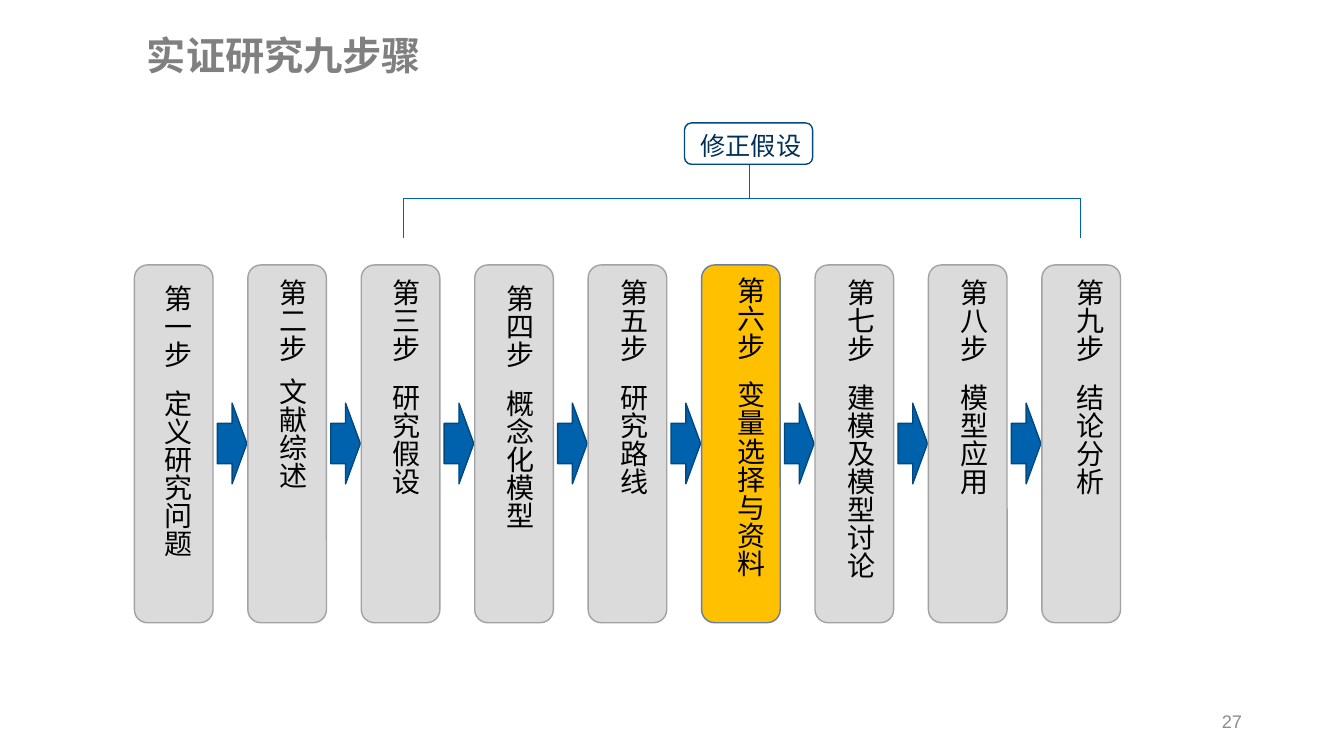
import pptx
import pptx.dml.color
import pptx.enum.shapes
import pptx.enum.text
import pptx.oxml.ns
import pptx.util
from lxml import etree

RGBColor = pptx.dml.color.RGBColor
Shape = pptx.enum.shapes.MSO_SHAPE
Align = pptx.enum.text.PP_ALIGN
Anchor = pptx.enum.text.MSO_ANCHOR
AutoSize = pptx.enum.text.MSO_AUTO_SIZE
qn = pptx.oxml.ns.qn

BLUE = RGBColor(0x00, 0x61, 0xAD)
DARK_BLUE = RGBColor(0x00, 0x48, 0x80)
NAVY = RGBColor(0x00, 0x30, 0x56)
SLATE = RGBColor(0x6A, 0x7E, 0xA3)
AMBER = RGBColor(0xFF, 0xC0, 0x00)
LIGHT_GRAY = RGBColor(0xDB, 0xDB, 0xDB)
EDGE_GRAY = RGBColor(0xA2, 0xA2, 0xA2)
TITLE_GRAY = RGBColor(0x80, 0x80, 0x80)
NUMBER_GRAY = RGBColor(0x8C, 0x8C, 0x8C)
BLACK = RGBColor(0x00, 0x00, 0x00)


class Board:
    """Draws on one slide; lengths are percent of its width and height."""

    latin = "Arial"
    chinese = "Noto Sans CJK SC"

    def __init__(self, presentation):
        self.width = presentation.slide_width
        self.height = presentation.slide_height
        self.slide = presentation.slides.add_slide(presentation.slide_layouts[6])

    def x(self, share):
        return round(self.width * share / 100)

    def y(self, share):
        return round(self.height * share / 100)

    def area(self, left, top, width, height):
        return self.x(left), self.y(top), self.x(width), self.y(height)

    def line(self, x1, y1, x2, y2):
        connector = self.slide.shapes.add_connector(
            pptx.enum.shapes.MSO_CONNECTOR.STRAIGHT,
            self.x(x1), self.y(y1), self.x(x2), self.y(y2))
        connector.line.color.rgb = BLUE
        connector.line.width = pptx.util.Pt(0.5)
        properties = connector._element.find(qn("p:spPr"))
        etree.SubElement(properties, qn("a:effectLst"))

    def shape(self, kind, area, edge, fill=None):
        shape = self.slide.shapes.add_shape(kind, *self.area(*area))
        shape.shadow.inherit = False
        if fill is None:
            shape.fill.background()
        else:
            shape.fill.solid()
            shape.fill.fore_color.rgb = fill
        shape.line.color.rgb = edge
        shape.line.width = pptx.util.Pt(1)

    def text(self, words, area, size, color, font=latin, bold=False, wrap=True,
             align=None, anchor=Anchor.TOP, grow=True, tab=None):
        box = self.slide.shapes.add_textbox(*self.area(*area))
        frame = box.text_frame
        frame.word_wrap = wrap
        frame.vertical_anchor = anchor
        if grow:
            frame.auto_size = AutoSize.SHAPE_TO_FIT_TEXT
        paragraph = frame.paragraphs[0]
        paragraph.text = words
        if align is not None:
            paragraph.alignment = align
        if tab is not None:  # vertical text with one tab stop
            frame._txBody.find(qn("a:bodyPr")).set("vert", "eaVert")
            stops = etree.SubElement(paragraph._p.get_or_add_pPr(), qn("a:tabLst"))
            etree.SubElement(stops, qn("a:tab"), pos=str(self.y(tab)), algn="l")
        paragraph.font.name = font
        paragraph.font.size = pptx.util.Pt(size)
        paragraph.font.bold = bold
        paragraph.font.color.rgb = color
        defaults = paragraph._p.pPr.find(qn("a:defRPr"))
        etree.SubElement(defaults, qn("a:ea"), typeface=self.chinese)


# Step number, name, text offset, text top, tab stop
STEPS = [
    ("第一步", "定义研究问题", 0.6, 36.4, 13.8),
    ("第二步", "文献综述", 0.75, 35.6, 13),
    ("第三步", "研究假设", 0.75, 35.6, 13.8),
    ("第四步", "概念化模型", 0.75, 36.4, 13.8),
    ("第五步", "研究路线", 0.78, 35.6, 13.8),
    ("第六步", "变量选择与资料", 1.05, 35.33, 13.8),
    ("第七步", "建模及模型讨论", 0.78, 35.6, 13.8),
    ("第八步", "模型应用", 0.75, 35.6, 13.8),
    ("第九步", "结论分析", 0.98, 35.6, 13.8),
]
CURRENT_STEP = "第六步"
FIRST_LEFT, PITCH = 10, 8.44


def main():
    presentation = pptx.Presentation()
    presentation.slide_width = pptx.util.Inches(13.33)
    presentation.slide_height = pptx.util.Inches(7.5)
    board = Board(presentation)

    # Title and page number
    board.text("实证研究九步骤", (10.2, 3.47, 53.18, 8), 28, TITLE_GRAY,
               font=board.chinese, bold=True)
    board.text("27", (70.65, 92.67, 22.5, 5.33), 13, NUMBER_GRAY,
               align=Align.RIGHT, anchor=Anchor.MIDDLE, grow=False)

    # Feedback bracket from step nine to step three
    left, middle, right = 30, 55.73, 80.4
    bar, foot = 26.27, 31.47
    board.line(left, bar, right, bar)
    board.line(middle, bar, middle, 21.87)
    for end in (left, right):
        board.line(end, bar, end, foot)
    board.shape(Shape.ROUNDED_RECTANGLE, (50.93, 16.27, 9.53, 5.47), DARK_BLUE)
    board.text("修正假设", (51.38, 16.53, 9, 5.6), 18, NAVY,
               font=board.chinese, wrap=False)

    # Step columns with arrows between them
    for index, (step, name, offset, top, tab) in enumerate(STEPS):
        column = FIRST_LEFT + index * PITCH
        current = step == CURRENT_STEP
        board.shape(Shape.ROUNDED_RECTANGLE, (column, 35.05, 5.85, 47.33),
                    SLATE if current else EDGE_GRAY,
                    AMBER if current else LIGHT_GRAY)
        if index < len(STEPS) - 1:
            board.shape(Shape.RIGHT_ARROW, (column + 6.17, 53.33, 2.2, 10.67),
                        DARK_BLUE, BLUE)
        board.text(f"{step}\t{name}", (column + offset, top, 4.2, 46.67),
                   20, BLACK, tab=tab)

    presentation.save("out.pptx")


if __name__ == "__main__":
    main()
